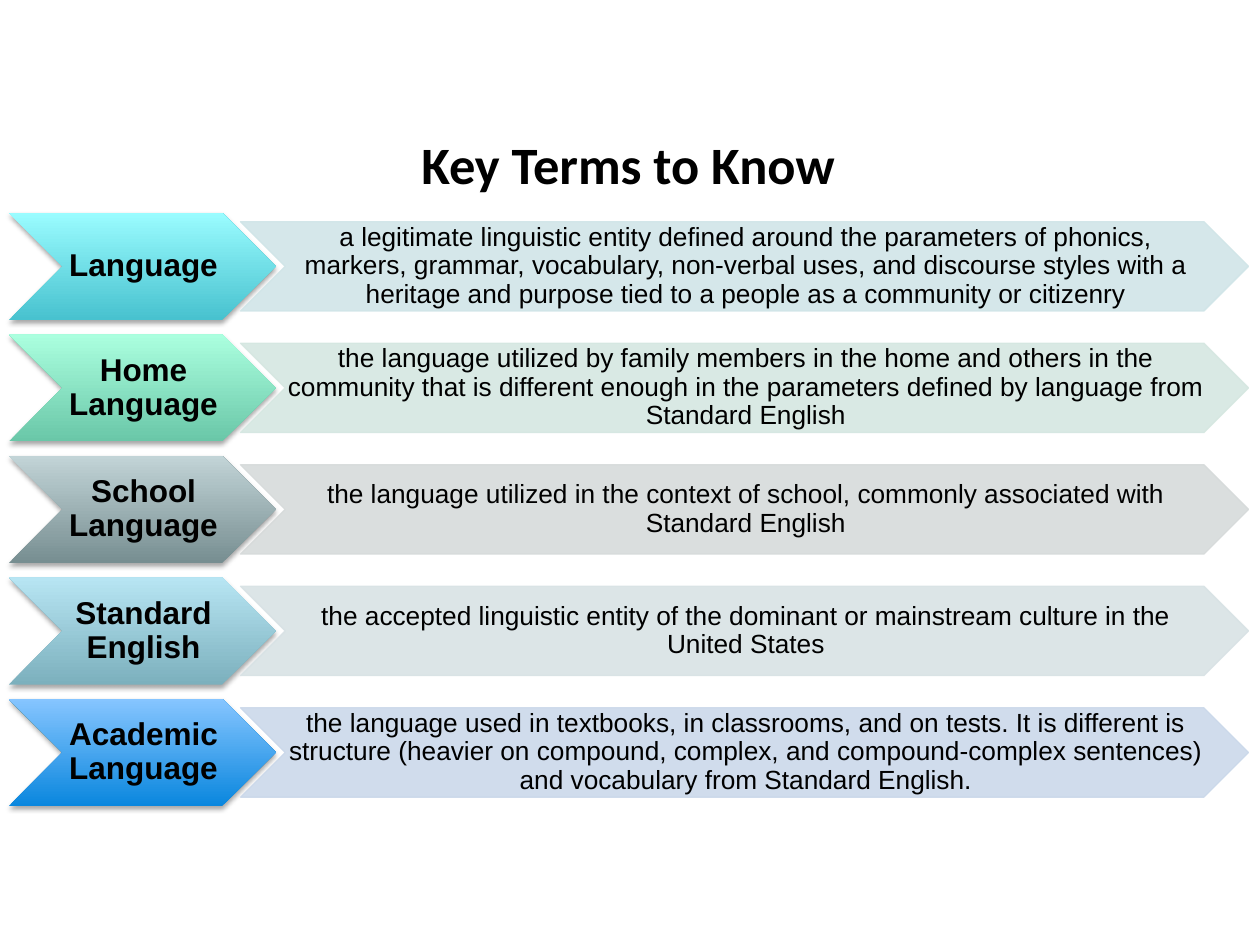
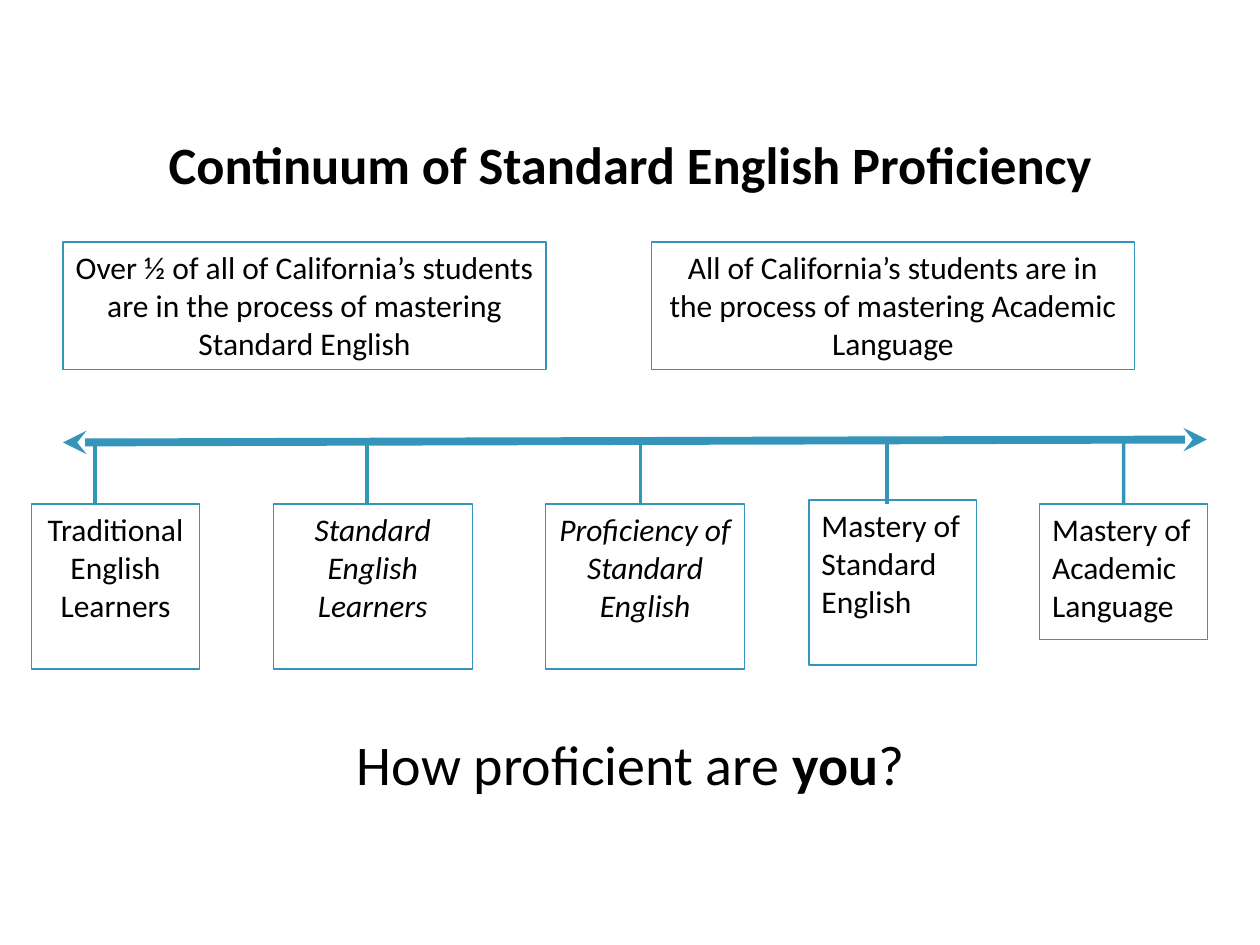
"""Build two slides on language terms and Standard English proficiency."""
from lxml import etree
from pptx import Presentation
from pptx import util as u
from pptx.dml.color import RGBColor
from pptx.enum import shapes, text
from pptx.oxml import ns

BLACK = RGBColor(0x00, 0x00, 0x00)
BLUE = RGBColor(0x34, 0x94, 0xBA)
CENTER = text.PP_ALIGN.CENTER
LEFT = text.PP_ALIGN.LEFT
TOP = text.MSO_ANCHOR.TOP
MIDDLE = text.MSO_ANCHOR.MIDDLE

TITLE = {"name": "Calibri", "size": u.Pt(30), "bold": True}
LABEL = {"name": "Arial", "size": u.Pt(18), "bold": True}
MEANING = {"name": "Arial", "size": u.Pt(15), "bold": False}
BOXED = {"name": "Calibri", "size": u.Pt(18), "italic": False}
QUESTION = {"name": "Calibri", "size": u.Pt(32), "bold": False}

WIDE_MARGINS = (0.25, 0.13, 0.25, 0.13)
TIGHT_MARGINS = (0.05, 0.03, 0, 0.03)

TERMS = [
    ("Language", "48C2CF", "9AFCFF", "D0E5E8",
     "a legitimate linguistic entity defined around the parameters of phonics, "
     "markers, grammar, vocabulary, non-verbal uses, and discourse styles with a "
     "heritage and purpose tied to a people as a community or citizenry"),
    ("Home Language", "6AC7A8", "ABFFDF", "D5E7E1",
     "the language utilized by family members in the home and others in the "
     "community that is different enough in the parameters defined by language "
     "from Standard English"),
    ("School Language", "778E91", "C2D4D7", "D6DADA",
     "the language utilized in the context of school, commonly associated with "
     "Standard English"),
    ("Standard English", "7CB0BD", "B7E5F3", "D8E2E5",
     "the accepted linguistic entity of the dominant or mainstream culture in the "
     "United States"),
    ("Academic Language", "0A87DE", "86C5FF", "CBD8EA",
     "the language used in textbooks, in classrooms, and on tests. It is different "
     "is structure (heavier on compound, complex, and compound-complex sentences) "
     "and vocabulary from Standard English."),
]
ROW_TOP, ROW_STEP = 4.29, 2.45
LABEL_HEIGHT, BAR_HEIGHT = 2.16, 1.8

CLAIMS = [
    (1.27, "Over ½ of all of California’s students are in the process of "
           "mastering Standard English"),
    (13.13, "All of California’s students are in the process of mastering "
            "Academic Language"),
]
AXIS_Y = 8.9
STAGES = [
    ("Traditional English Learners", 0.64, 10.16, 3.38, 3.33, 1.91, CENTER, False),
    ("Standard English Learners", 5.51, 10.16, 4.01, 3.33, 7.4, CENTER, True),
    ("Proficiency of Standard English", 11, 10.16, 4.01, 3.33, 12.91, CENTER, True),
    ("Mastery of Standard English", 16.31, 10.08, 3.38, 3.33, 17.88, LEFT, False),
    ("Mastery of Academic Language", 20.96, 10.16, 3.38, 2.74, 22.65, LEFT, False),
]


def apply(target, formats):
    """Set every attribute named in a dict of format values."""
    for name, value in formats.items():
        setattr(target, name, value)


def place(*lengths):
    """Turn centimetres into lengths."""
    return [u.Cm(length) for length in lengths]


def write(shape, spans, font, align=CENTER, anchor=TOP, margins=WIDE_MARGINS,
          spacing=1.0):
    """Fill a shape with one paragraph of (words, extra format) spans."""
    frame = shape.text_frame
    left, top, right, bottom = place(*margins)
    apply(frame, {"word_wrap": True, "auto_size": text.MSO_AUTO_SIZE.NONE,
                  "vertical_anchor": anchor, "margin_left": left,
                  "margin_top": top, "margin_right": right,
                  "margin_bottom": bottom})
    para = frame.paragraphs[0]
    apply(para, {"alignment": align, "line_spacing": spacing})
    for words, extra in spans:
        span = para.add_run()
        span.text = words
        apply(span.font, {**font, **extra})
        span.font.color.rgb = BLACK


def add_page(deck, title, left):
    """Add a page with its title placed and formatted."""
    page = deck.slides.add_slide(deck.slide_layouts[5])
    heading = page.shapes.title
    apply(heading, dict(zip(("left", "top", "width", "height"),
                            place(left, 2.54, 19.69, 1.55))))
    write(heading, [(title, {})], TITLE)
    return page


def add_chevron(page, bounds, words, font):
    """Add a flat chevron with tight centred text."""
    chevron = page.shapes.add_shape(shapes.MSO_SHAPE.CHEVRON, *place(*bounds))
    chevron.shadow.inherit = False
    write(chevron, [(words, {})], font, anchor=MIDDLE, margins=TIGHT_MARGINS,
          spacing=0.9)
    return chevron


def add_label(page, top, words, dark, light):
    """Add a term's chevron, shaded upwards from dark to light, with a shadow."""
    label = add_chevron(page, (0.18, top, 5.38, LABEL_HEIGHT), words, LABEL)
    label.line.fill.background()
    label.fill.gradient()
    label.fill.gradient_angle = 90
    for stop, color in zip(label.fill.gradient_stops, (dark, light)):
        stop.color.rgb = RGBColor.from_string(color)
    effects = label._element.spPr.find(ns.qn("a:effectLst"))
    shadow = etree.SubElement(effects, ns.qn("a:outerShdw"), blurRad=str(u.Pt(3.1)),
                              dist=str(u.Pt(1.8)), dir="5400000", rotWithShape="0")
    black = etree.SubElement(shadow, ns.qn("a:srgbClr"), val="000000")
    etree.SubElement(black, ns.qn("a:alpha"), val="35000")


def add_meaning(page, top, words, tint):
    """Add the pale, slightly transparent chevron that explains a term."""
    bar = add_chevron(page, (4.85, top, 20.32, BAR_HEIGHT), words, MEANING)
    bar.fill.solid()
    bar.fill.fore_color.rgb = RGBColor.from_string(tint)
    bar.line.color.rgb = RGBColor.from_string(tint)
    bar.line.width = u.Pt(0.75)
    for color in bar._element.spPr.iter(ns.qn("a:srgbClr")):
        etree.SubElement(color, ns.qn("a:alpha"), val="89000")


def add_box(page, bounds, words, align=CENTER, italic=False):
    """Add an outlined, unfilled rectangle with text."""
    box = page.shapes.add_shape(shapes.MSO_SHAPE.RECTANGLE, *place(*bounds))
    box.shadow.inherit = False
    box.fill.background()
    box.line.color.rgb = BLUE
    box.line.width = u.Pt(0.75)
    write(box, [(words, {"italic": italic})], BOXED, align)
    return box


def add_line(page, ends, width, arrows=False):
    """Add a straight blue line, with an arrowhead at both ends if wanted."""
    line = page.shapes.add_connector(shapes.MSO_CONNECTOR.STRAIGHT, *place(*ends))
    line.line.color.rgb = BLUE
    line.line.width = u.Pt(width)
    if arrows:
        for end in ("a:headEnd", "a:tailEnd"):
            etree.SubElement(line.line._get_or_add_ln(), ns.qn(end), type="stealth")
    etree.SubElement(line._element.spPr, ns.qn("a:effectLst"))
    return line


def add_stage(page, words, left, top, width, height, stem_x, align, italic):
    """Add a stage box and the stem that hangs it from the axis."""
    stem = add_line(page, (stem_x, AXIS_Y, stem_x, 10.16), 2)
    box = add_box(page, (left, top, width, height), words, align, italic)
    if abs(left + width / 2 - stem_x) < 0.02:
        stem.end_connect(box, 0)


def build_terms(deck):
    """Build the page of key terms."""
    page = add_page(deck, "Key Terms to Know", 2.82)
    for row, (term, dark, light, tint, meaning) in enumerate(TERMS):
        top = ROW_TOP + row * ROW_STEP
        add_label(page, top, term, dark, light)
        add_meaning(page, top + (LABEL_HEIGHT - BAR_HEIGHT) / 2, meaning, tint)


def build_continuum(deck):
    """Build the page of the proficiency continuum."""
    page = add_page(deck, "Continuum of Standard English Proficiency", 2.87)
    add_line(page, (1.27, 8.92, 24.33, 8.86), 4.5, arrows=True)
    for left, claim in CLAIMS:
        add_box(page, (left, 4.88, 9.74, 2.57), claim)
    for stage in STAGES:
        add_stage(page, *stage)
    closing = page.shapes.add_textbox(*place(6.76, 14.58, 11.91, 1.63))
    write(closing, [("How proficient are ", {}), ("you", {"bold": True}), ("?", {})],
          QUESTION)


def main():
    """Build and save the deck."""
    deck = Presentation()
    deck.slide_width, deck.slide_height = place(25.4, 19.05)
    build_terms(deck)
    build_continuum(deck)
    deck.save("out.pptx")


if __name__ == "__main__":
    main()
